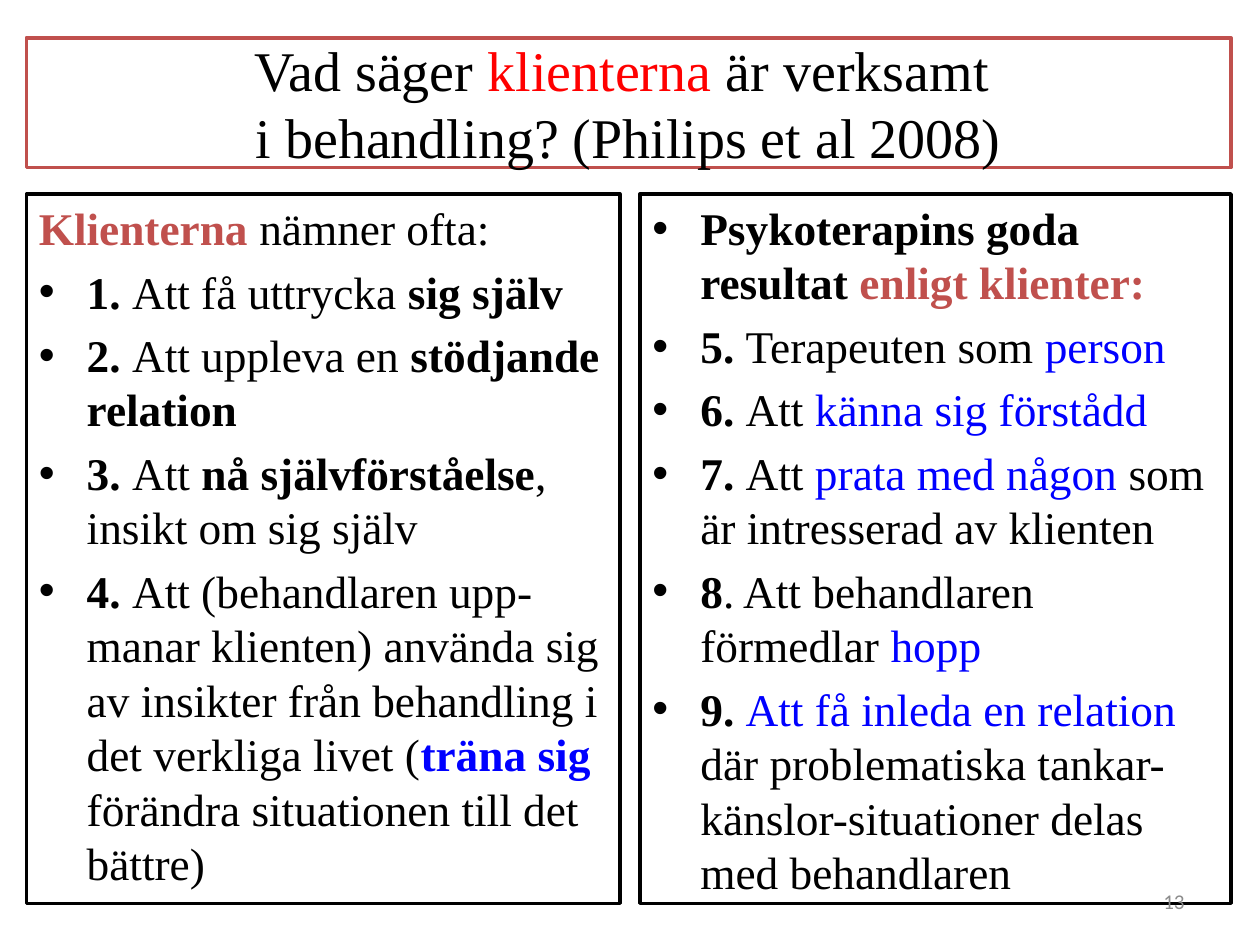
"""Build the slide on what clients say works in treatment."""
from lxml.etree import SubElement
from pptx import Presentation
from pptx.dml.color import RGBColor
from pptx.enum.shapes import MSO_SHAPE
from pptx.enum.text import MSO_ANCHOR, PP_ALIGN
from pptx.oxml.ns import qn
from pptx.util import Inches, Pt

BLACK = RGBColor(0, 0, 0)
WHITE = RGBColor(255, 255, 255)
RED = RGBColor(255, 0, 0)
BRICK = RGBColor(0xC0, 0x50, 0x4D)
BLUE = RGBColor(0, 0, 255)
GREY = RGBColor(0x8C, 0x8C, 0x8C)
SERIF = "Times New Roman"


def add_box(left, top, width, height, color):
    box = slide.shapes.add_shape(
        MSO_SHAPE.RECTANGLE, Inches(left), Inches(top), Inches(width), Inches(height))
    box.shadow.inherit = False
    box.fill.solid()
    box.fill.fore_color.rgb = WHITE
    box.line.color.rgb = color
    box.line.width = Pt(2)
    box.text_frame.word_wrap = True
    return box.text_frame


def add_run(para, text, size, color=BLACK, bold=False, name=SERIF):
    run = para.add_run()
    run.text = text
    run.font.name = name
    run.font.size = Pt(size)
    run.font.bold = bold
    run.font.color.rgb = color


deck = Presentation()
deck.slide_width = Inches(10)
deck.slide_height = Inches(7.5)
slide = deck.slides.add_slide(deck.slide_layouts[6])

frame = add_box(0.21, 0.3, 9.56, 1.03, BRICK)
frame.vertical_anchor = MSO_ANCHOR.MIDDLE
title = frame.paragraphs[0]
title.alignment = PP_ALIGN.CENTER
add_run(title, "Vad säger ", 32)
add_run(title, "klienterna", 32, RED)
add_run(title, " är verksamt ", 32)
title.add_line_break()
add_run(title, "i behandling? (Philips et al 2008)", 32)

left = [
    [("Klienterna ", BRICK, True), ("nämner ofta:",)],
    [("1. ", BLACK, True), ("Att få uttrycka ",), ("sig själv", BLACK, True)],
    [("2. ", BLACK, True), ("Att uppleva en ",), ("stödjande relation", BLACK, True)],
    [("3. ", BLACK, True), ("Att ",), ("nå självförståelse", BLACK, True),
     (", insikt om sig själv",)],
    [("4. ", BLACK, True),
     ("Att (behandlaren upp-manar klienten) använda sig av insikter "
      "från behandling i det verkliga livet (",),
     ("träna sig ", BLUE, True), ("förändra situationen till det bättre)",)],
]
right = [
    [("Psykoterapins goda resultat ", BLACK, True), ("enligt klienter:", BRICK, True)],
    [("5. ", BLACK, True), ("Terapeuten som ",), ("person", BLUE)],
    [("6. ", BLACK, True), ("Att ",), ("känna sig förstådd", BLUE)],
    [("7. ", BLACK, True), ("Att ",), ("prata med någon ", BLUE),
     ("som är intresserad av klienten",)],
    [("8", BLACK, True), (". Att behandlaren förmedlar ",), ("hopp", BLUE)],
    [("9. ", BLACK, True), ("Att få inleda en relation ", BLUE),
     ("där problematiska tankar-känslor-situationer delas med behandlaren",)],
]

for x, width, items in [(0.21, 4.71, left), (5.08, 4.69, right)]:
    frame = add_box(x, 1.54, width, 5.63, BLACK)
    frame.vertical_anchor = MSO_ANCHOR.TOP
    for i, parts in enumerate(items):
        para = frame.add_paragraph() if i else frame.paragraphs[0]
        para.alignment = PP_ALIGN.LEFT
        para.space_before = Pt(5.2)
        if items is right or i:
            props = para._p.get_or_add_pPr()
            props.set("marL", str(Inches(0.38)))
            props.set("indent", str(Inches(-0.38)))
            SubElement(props, qn("a:buFont"), typeface="Arial")
            SubElement(props, qn("a:buChar"), char="•")
        for text, *style in parts:
            add_run(para, text, 25.9, *style)

note = slide.shapes.add_textbox(Inches(7.17), Inches(6.95), Inches(2.33), Inches(0.4))
note.text_frame.word_wrap = True
note.text_frame.vertical_anchor = MSO_ANCHOR.MIDDLE
page = note.text_frame.paragraphs[0]
page.alignment = PP_ALIGN.RIGHT
add_run(page, "13", 12, GREY, name="Calibri")

deck.save("out.pptx")
